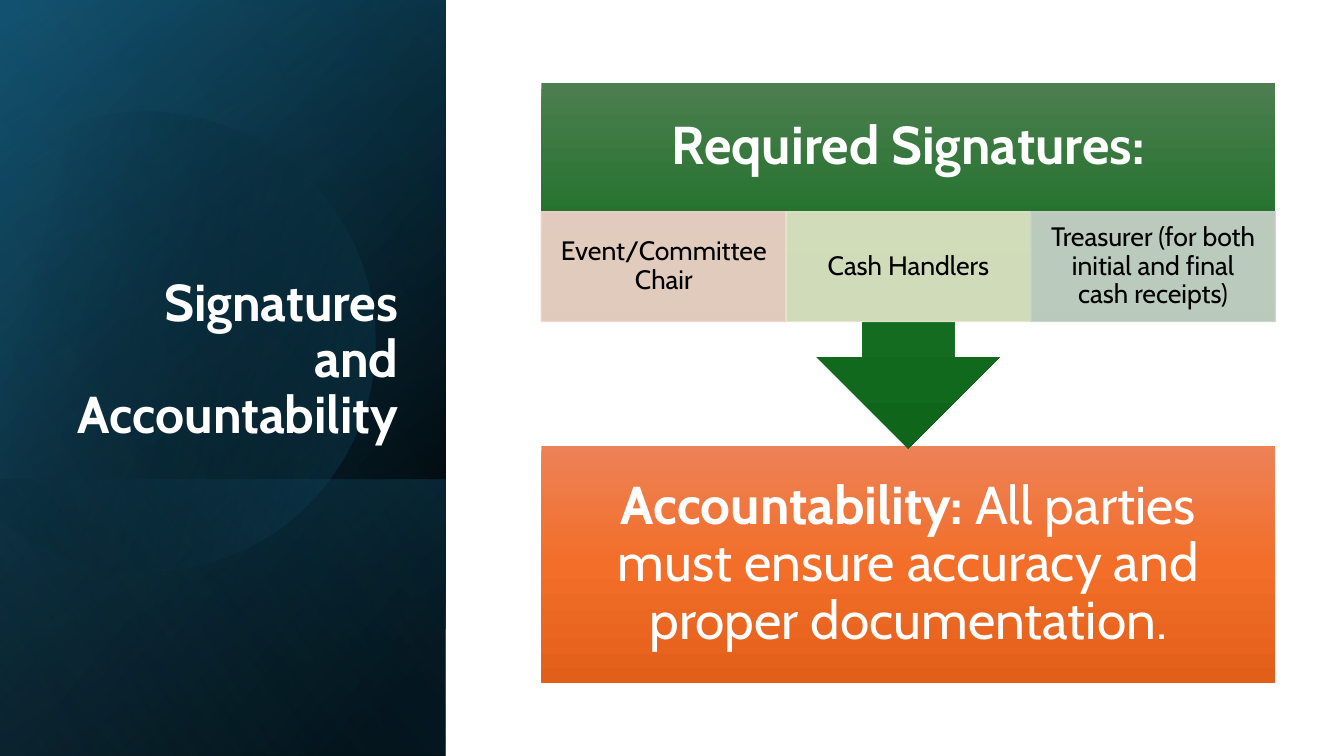
"""Build the signatures and accountability slide."""
from math import cos, radians, sin, tan

from pptx import Presentation
from pptx.dml.color import RGBColor as RGB
from pptx.enum.shapes import MSO_SHAPE as SHAPE
from pptx.enum.text import MSO_ANCHOR as ANCHOR, PP_ALIGN as ALIGN
from pptx.oxml import parse_xml
from pptx.oxml.ns import nsdecls, qn
from pptx.util import Inches, Pt

COLORS = {
    "white": "FFFFFF", "black": "000000",
    "navy": "104862", "teal": "156082", "sky": "46B1E1",
    "orange_top": "ED8257", "orange_mid": "F26E29", "orange_end": "E25F1A",
    "green_top": "4D7E50", "green_mid": "156F21", "green_end": "0F661B",
    "rose": "F7D5CE", "lime": "E5E8CA", "sage": "CCD4CD",
}


class SlideBuilder:
    """Holds the style and the current slide."""

    def __init__(self, slide, font="Cabin"):
        self.shapes = slide.shapes
        self.font = font

    def gradient(self, sp, stops, angle):
        """Fill a shape with (position, colour, opacity) stops."""
        gs = "".join(
            f'<a:gs pos="{pos * 1000}"><a:srgbClr val="{COLORS[color]}">'
            f'<a:alpha val="{alpha * 1000}"/></a:srgbClr></a:gs>'
            for pos, color, alpha in stops)
        sp.fill.background()
        spPr = sp._element.spPr
        spPr.replace(spPr.find(qn("a:noFill")), parse_xml(
            f'<a:gradFill {nsdecls("a")} rotWithShape="1"><a:gsLst>{gs}</a:gsLst>'
            f'<a:lin ang="{angle * 60000}" scaled="0"/></a:gradFill>'))
        sp.line.fill.background()
        sp.shadow.inherit = False

    def block(self, box, stops, angle=90, kind=SHAPE.RECTANGLE):
        """Add a preset shape with a gradient."""
        sp = self.shapes.add_shape(kind, *map(Inches, box))
        self.gradient(sp, stops, angle)
        return sp

    def layer(self, box, stops, angle):
        """Add a mirrored rectangle turned a quarter."""
        sp = self.block(box, stops, angle)
        sp.rotation = 90
        sp._element.spPr.find(qn("a:xfrm")).set("flipH", "1")

    def disc(self, cx, cy, radius, turns, stops, angle, rotation):
        """Add a rotated circle segment drawn through the given turns."""
        def on_circle(turn, lean=0):
            t = radians(turn)
            return (Inches(cx + radius * (cos(t) - lean * sin(t))),
                    Inches(cy + radius * (sin(t) + lean * cos(t))))

        points = [on_circle(t) for t in turns]
        outline = self.shapes.build_freeform(*points[0])
        outline.add_line_segments(points[1:], close=True)
        sp = outline.convert_to_shape()
        left, top = sp.left, sp.top
        lines = list(sp._element.spPr.iter(qn("a:lnTo")))
        for line, start, end in zip(lines, turns, turns[1:]):
            lean = 4 / 3 * tan(radians(end - start) / 4)
            curve = (on_circle(start, lean), on_circle(end, -lean), on_circle(end))
            pts = "".join(f'<a:pt x="{x - left}" y="{y - top}"/>' for x, y in curve)
            line.getparent().replace(line, parse_xml(
                f'<a:cubicBezTo {nsdecls("a")}>{pts}</a:cubicBezTo>'))
        sp.rotation = rotation
        self.gradient(sp, stops, angle)

    def cell(self, box, color, opacity=90):
        """Add a translucent outlined rectangle."""
        sp = self.shapes.add_shape(SHAPE.RECTANGLE, *map(Inches, box))
        sp.shadow.inherit = False
        sp.line.width = Pt(1)
        for fill in (sp.fill, sp.line.fill):
            fill.solid()
            fill.fore_color.rgb = RGB.from_string(COLORS[color])
        for clr in sp._element.spPr.iter(qn("a:srgbClr")):
            clr.append(parse_xml(
                f'<a:alpha {nsdecls("a")} val="{opacity * 1000}"/>'))
        return sp

    def text(self, sp, runs, size, color="white", insets=(0.3, 0.3),
             anchor=ANCHOR.MIDDLE, align=ALIGN.CENTER):
        """Write (text, bold) runs into a shape."""
        tf = sp.text_frame
        side, edge = map(Inches, insets)
        frame = {"word_wrap": True, "vertical_anchor": anchor,
                 "margin_left": side, "margin_right": side,
                 "margin_top": edge, "margin_bottom": edge}
        for name, value in frame.items():
            setattr(tf, name, value)
        p = tf.paragraphs[0]
        p.alignment, p.line_spacing = align, 0.9
        for words, bold in runs:
            r = p.add_run()
            r.text = words
            for name, value in {"name": self.font, "size": Pt(size),
                                "bold": bold}.items():
                setattr(r.font, name, value)
            r.font.color.rgb = RGB.from_string(COLORS[color])

    def textbox(self, box, runs, size, **style):
        """Add a text box."""
        self.text(self.shapes.add_textbox(*map(Inches, box)), runs, size, **style)


def main():
    """Draw the side panel, the signature callout and the accountability box."""
    prs = Presentation()
    prs.slide_width, prs.slide_height = Inches(13.33), Inches(7.5)
    s = SlideBuilder(prs.slides.add_slide(prs.slide_layouts[6]))

    panel = (-1.54, 1.54, 7.5, 4.42)
    panel_foot = (0.84, 3.92, 2.74, 4.42)
    s.layer(panel, [(8, "black", 100), (100, "navy", 100)], 50)
    s.layer(panel, [(0, "black", 0), (99, "teal", 46)], 30)
    s.layer(panel_foot, [(2, "teal", 29), (100, "black", 30)], 130)
    s.disc(1.44, 3.35, 2.28, (-119, -90, 0, 90, 151),
           [(29, "black", 0), (100, "teal", 43)], 30, 343.9)
    s.layer(panel, [(0, "black", 0), (99, "sky", 11)], 120)
    s.textbox((0.64, 1.84, 3.41, 2.62), [("Signatures and Accountability", True)],
              37, insets=(0.1, 0.05), anchor=ANCHOR.BOTTOM, align=ALIGN.RIGHT)

    left, width = 5.37, 7.28
    accountability = s.block(
        (left, 4.42, width, 2.36),
        [(0, "orange_top", 100), (50, "orange_mid", 100), (100, "orange_end", 100)])
    s.text(accountability, [
        ("Accountability: ", True),
        ("All parties must ensure accuracy and proper documentation.", False)], 38)

    s.block(
        (left, 0.82, width, 3.63),
        [(0, "green_top", 100), (50, "green_mid", 100), (100, "green_end", 100)],
        kind=SHAPE.DOWN_ARROW_CALLOUT)
    s.textbox((left, 0.82, width, 1.28), [("Required Signatures:", True)], 38)

    signers = [("Event/Committee Chair", "rose"), ("Cash Handlers", "lime"),
               ("Treasurer (for both initial and final cash receipts)", "sage")]
    cell_width = width / len(signers)
    for i, (signer, color) in enumerate(signers):
        sp = s.cell((left + i * cell_width, 2.1, cell_width, 1.09), color)
        s.text(sp, [(signer, False)], 19, "black", (0.15, 0.03))

    prs.save("out.pptx")


if __name__ == "__main__":
    main()
